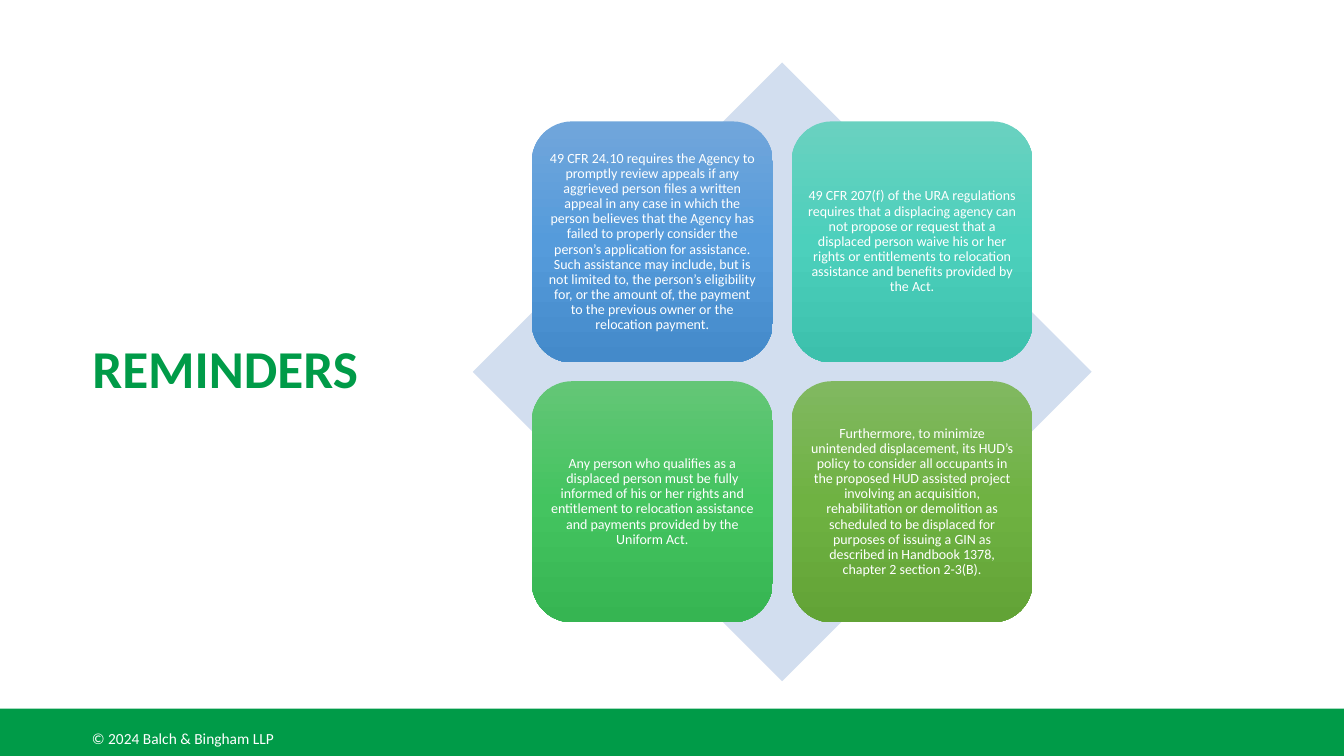
from copy import deepcopy

from pptx import Presentation
from pptx.dml.color import RGBColor as RGB
from pptx.enum.shapes import MSO_SHAPE as SHAPE
from pptx.enum.text import MSO_ANCHOR as ANCHOR, PP_ALIGN as ALIGN
from pptx.util import Pt

# Content
TITLE = "REMINDERS"
COPYRIGHT = "© 2024 Balch & Bingham LLP"
REMINDERS = [
    ("49 CFR 24.10 requires the Agency to promptly review appeals if any aggrieved "
     "person files a written appeal in any case in which the person believes that the "
     "Agency has failed to properly consider the person’s application for assistance. "
     "Such assistance may include, but is not limited to, the person’s eligibility for, "
     "or the amount of, the payment to the previous owner or the relocation payment.",
     (RGB(0x71, 0xA6, 0xDB), RGB(0x55, 0x9B, 0xDB), RGB(0x44, 0x8A, 0xCA))),
    ("49 CFR 207(f) of the URA regulations requires that a displacing agency can not "
     "propose or request that a displaced person waive his or her rights or "
     "entitlements to relocation assistance and benefits provided by the Act.",
     (RGB(0x6A, 0xD1, 0xC0), RGB(0x4C, 0xD0, 0xBC), RGB(0x3C, 0xC0, 0xAC))),
    ("Any person who qualifies as a displaced person must be fully informed of his or "
     "her rights and entitlement to relocation assistance and payments provided by the "
     "Uniform Act.",
     (RGB(0x64, 0xC6, 0x77), RGB(0x44, 0xC4, 0x60), RGB(0x36, 0xB5, 0x52))),
    ("Furthermore, to minimize unintended displacement, its HUD’s policy to consider "
     "all occupants in the proposed HUD assisted project involving an acquisition, "
     "rehabilitation or demolition as scheduled to be displaced for purposes of issuing "
     "a GIN as described in Handbook 1378, chapter 2 section 2-3(B).",
     (RGB(0x81, 0xB8, 0x61), RGB(0x6F, 0xB2, 0x42), RGB(0x62, 0xA3, 0x36))),
]

# Colours, formats and measures in points
GREEN = RGB(0x00, 0x9B, 0x48)
WHITE = RGB(0xFF, 0xFF, 0xFF)
PALE_BLUE = RGB(0xD2, 0xDE, 0xEF)
TITLE_FONT = {"name": "Calibri", "size": Pt(38), "bold": True}
COPYRIGHT_FONT = {"name": "Calibri", "size": Pt(11)}
REMINDER_FONT = {"name": "Calibri", "size": Pt(10)}
SLIDE_W, SLIDE_H = 960, 540
BAND_TOP = 506.2
CENTRE_X, CENTRE_Y = 558.7, 265.6
DIAMOND = 442
CARD, GAP = 172.2, 13.4

presentation = Presentation()
presentation.slide_width, presentation.slide_height = Pt(SLIDE_W), Pt(SLIDE_H)
slide = presentation.slides.add_slide(presentation.slide_layouts[6])


def add_plain(kind, *box):
    shape = slide.shapes.add_shape(kind, *map(Pt, box))
    shape.shadow.inherit = False
    shape.line.fill.background()
    return shape


def fill_solid(shape, colour):
    shape.fill.solid()
    shape.fill.fore_color.rgb = colour


def fill_gradient(shape, colours):
    fill = shape.fill
    fill.gradient()
    fill.gradient_angle = 270
    first = shape.element.spPr.xpath("a:gradFill/a:gsLst/a:gs")[0]
    first.addnext(deepcopy(first))
    for stop, position, colour in zip(fill.gradient_stops, (0, 0.5, 1), colours):
        stop.position = position
        stop.color.rgb = colour


def write(shape, text, font, colour, inset=(0, 0), align=ALIGN.LEFT, spacing=0.9):
    frame = shape.text_frame
    across, down = map(Pt, inset)
    layout = {"word_wrap": True, "vertical_anchor": ANCHOR.MIDDLE,
              "margin_left": across, "margin_right": across,
              "margin_top": down, "margin_bottom": down}
    for key, value in layout.items():
        setattr(frame, key, value)
    paragraph = frame.paragraphs[0]
    paragraph.alignment = align
    paragraph.line_spacing = spacing
    run = paragraph.add_run()
    run.text = text
    for key, value in font.items():
        setattr(run.font, key, value)
    run.font.color.rgb = colour


# Footer band
band = add_plain(SHAPE.RECTANGLE, 0, BAND_TOP, SLIDE_W, SLIDE_H - BAND_TOP)
fill_solid(band, GREEN)
copyright_line = slide.shapes.add_textbox(Pt(58.5), Pt(517), Pt(150.5), Pt(20.6))
write(copyright_line, COPYRIGHT, COPYRIGHT_FONT, WHITE, inset=(7.2, 3.6), spacing=1.0)

# Title
title = slide.shapes.add_textbox(Pt(66), Pt(213), Pt(828), Pt(104.4))
write(title, TITLE, TITLE_FONT, GREEN)

# Diamond behind the cards
diamond = add_plain(SHAPE.DIAMOND, CENTRE_X - DIAMOND / 2, CENTRE_Y - DIAMOND / 2,
                    DIAMOND, DIAMOND)
fill_solid(diamond, PALE_BLUE)

# Two by two cards around the centre
for index, (reminder, colours) in enumerate(REMINDERS):
    row, column = divmod(index, 2)
    left = CENTRE_X - CARD - GAP / 2 + column * (CARD + GAP)
    top = CENTRE_Y - CARD - GAP / 2 + row * (CARD + GAP)
    card = add_plain(SHAPE.ROUNDED_RECTANGLE, left, top, CARD, CARD)
    fill_gradient(card, colours)
    write(card, reminder, REMINDER_FONT, WHITE, inset=(3, 3), align=ALIGN.CENTER)

presentation.save("out.pptx")
